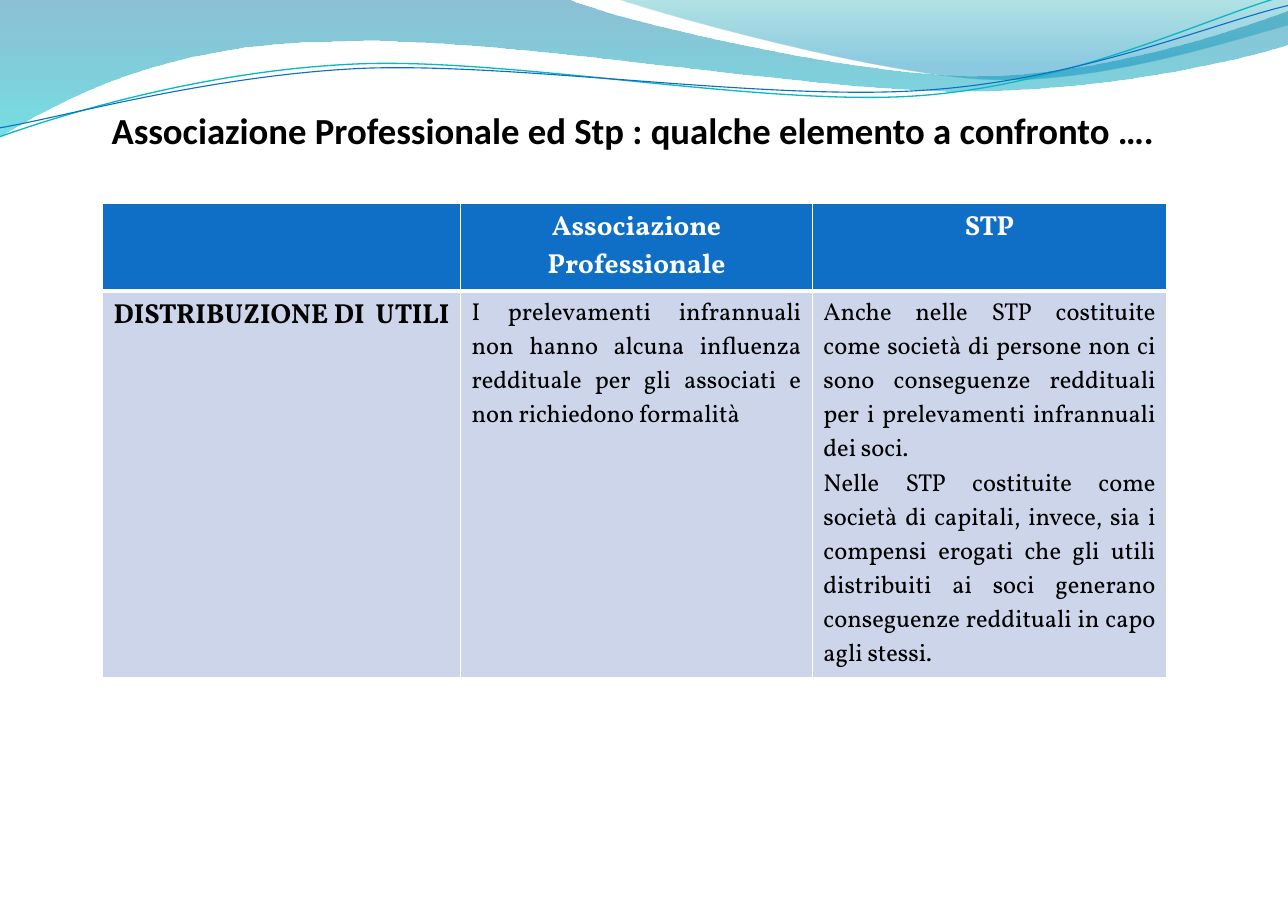
from lxml.etree import SubElement
from pptx import Presentation
from pptx.dml.color import RGBColor
from pptx.enum.text import MSO_ANCHOR, PP_ALIGN as Align
from pptx.oxml.ns import qn
from pptx.util import Pt

THEME = {
    "title_font": "Calibri", "table_font": "Vollkorn",
    "title_size": 24, "header_size": 18, "body_size": 16,
    "black": "000000", "white": "FFFFFF", "blue": "0F6FC6", "teal": "0AB8BF",
    "body_fill": "CCD5EA",
    "wide_gradient": [(0, "0074A1", 45), (1, "00C6CF", 55)],
    "crest_gradient": [(0, "00A1A9", 30), (0.8, "008BBF", 45)],
}
PAGE_SIZE = (841.7, 594.7)
TITLE = "Associazione Professionale ed Stp : qualche elemento a confronto …."
TITLE_BOX = (72.9, 69.3, 696.2, 30.2)

TABLE_AT = (67, 133.2)
COLUMN_WIDTHS = (234, 229.9, 231.6)
ROW_HEIGHTS = (57.2, 252.5)
HEADER = ["", "Associazione Professionale", "STP"]
ROW_LABEL = "DISTRIBUZIONE DI  UTILI"
COMPARISON = [
    ["I prelevamenti infrannuali non hanno alcuna influenza reddituale per gli "
     "associati e non richiedono formalità"],
    ["Anche nelle STP costituite come società di persone non ci sono conseguenze "
     "reddituali per i prelevamenti infrannuali dei soci.",
     "Nelle STP costituite come società di capitali, invece, sia i compensi erogati "
     "che gli utili distribuiti ai soci generano conseguenze reddituali in capo "
     "agli stessi."],
]

# Each step is one point (straight) or two handles and an end point (curve).
WIDE_WAVE = [
    [(0, 0)], [(370.8, -0.7)],
    [(400.3, 13), (558.7, 49.7), (638.6, 49.7)],
    [(718.6, 49.7), (807.1, 20.2), (841.7, 7.2)],
    [(843.1, 28.8)],
    [(828, 34.6), (732.2, 59.8), (627.8, 59.8)],
    [(523.4, 59.8), (321.1, 22.3), (216.7, 27.4)],
    [(108.7, 28.1), (38.9, 65.5), (-0.7, 90)],
]
CREST_WAVE = [
    [(403.2, -0.7)],
    [(429.1, 8.6), (573.8, 49), (647.3, 51.8)],
    [(720.7, 54.7), (809.3, 25.2), (841.7, 16.6)],
    [(841.7, 0)],
]
TEAL_LINE = [
    [(0, 89.3)],
    [(40.3, 74.9), (133.2, 46.1), (232.6, 41.8)],
    [(332.6, 37.4), (499, 69.8), (599.8, 62.6)],
    [(701.3, 55.4), (789.8, 10.8), (840.2, -2.9)],
]
BLUE_LINE = [
    [(0, 83.5)],
    [(39.6, 77), (137.5, 49), (238.3, 44.6)],
    [(339.1, 41), (502.6, 66.2), (603.4, 59)],
    [(704.9, 52.6), (792.7, 15.1), (841.7, 3.6)],
]


def color(name):
    return RGBColor.from_string(THEME.get(name, name))


def add_outline(page, steps, closed):
    """Draw straight segments between the step ends, then bend the curved ones."""
    start, *ends = [tuple(map(Pt, step[-1])) for step in steps]
    builder = page.shapes.build_freeform(*start)
    builder.add_line_segments(ends, close=closed)
    shape = builder.convert_to_shape()
    shape.shadow.inherit = False
    segments = list(shape.element.spPr.iter(qn("a:lnTo")))
    for segment, step in zip(segments, steps[1:]):
        if len(step) == 1:
            continue
        segment.tag = qn("a:cubicBezTo")
        segment.remove(segment[0])
        for x, y in step:
            SubElement(segment, qn("a:pt"),
                       x=str(Pt(x) - shape.left), y=str(Pt(y) - shape.top))
    return shape


def add_wave(page, steps, gradient):
    wave = add_outline(page, steps, True)
    wave.line.fill.background()
    wave.fill.gradient()
    wave.fill.gradient_angle = 270
    for stop, (position, shade, _) in zip(wave.fill.gradient_stops, gradient):
        stop.position = position
        stop.color.rgb = color(shade)
    shades = wave.element.spPr.iter(qn("a:srgbClr"))
    for node, (_, _, opacity) in zip(shades, gradient):
        SubElement(node, qn("a:alpha"), val=str(opacity * 1000))


def add_wave_line(page, steps, shade, width):
    curve = add_outline(page, steps, False)
    curve.fill.background()
    curve.line.color.rgb = color(shade)
    curve.line.width = Pt(width)


def write(frame, texts, font, size, shade, bold, align):
    for index, text in enumerate(texts):
        para = frame.add_paragraph() if index else frame.paragraphs[0]
        para.alignment = align
        span = para.add_run()
        span.text = text
        span.font.name = THEME[font]
        span.font.size = Pt(THEME[size])
        span.font.bold = bold
        span.font.color.rgb = color(shade)


def style_cell(cell, fill, top, bottom):
    """Set white borders (top and bottom widths given) and a solid fill."""
    properties = cell._tc.get_or_add_tcPr()
    for side, width in (("L", 1), ("R", 1), ("T", top), ("B", bottom)):
        border = SubElement(properties, qn(f"a:ln{side}"), w=str(Pt(width)))
        paint = SubElement(border, qn("a:solidFill"))
        SubElement(paint, qn("a:srgbClr"), val=THEME["white"])
    cell.fill.solid()
    cell.fill.fore_color.rgb = color(fill)


def add_title(page):
    box = page.shapes.add_textbox(*map(Pt, TITLE_BOX))
    frame = box.text_frame
    frame.word_wrap = True
    frame.vertical_anchor = MSO_ANCHOR.BOTTOM
    frame.margin_left = frame.margin_right = frame.margin_top = frame.margin_bottom = 0
    write(frame, [TITLE], "title_font", "title_size", "black", True, Align.LEFT)


def add_comparison(page):
    size = (sum(COLUMN_WIDTHS), sum(ROW_HEIGHTS))
    table = page.shapes.add_table(len(ROW_HEIGHTS), len(COLUMN_WIDTHS),
                                  *map(Pt, TABLE_AT + size)).table
    for row, height in zip(table.rows, ROW_HEIGHTS):
        row.height = Pt(height)
    body = [[ROW_LABEL], *COMPARISON]
    for index, width in enumerate(COLUMN_WIDTHS):
        table.columns[index].width = Pt(width)
        head, cell = table.cell(0, index), table.cell(1, index)
        style_cell(head, "blue", 1, 3)
        style_cell(cell, "body_fill", 3, 1)
        if HEADER[index]:
            write(head.text_frame, [HEADER[index]], "table_font", "header_size",
                  "white", True, Align.CENTER)
        is_label = index == 0
        write(cell.text_frame, body[index], "table_font",
              "header_size" if is_label else "body_size", "black", is_label,
              Align.JUSTIFY)


def main():
    deck = Presentation()
    deck.slide_width, deck.slide_height = map(Pt, PAGE_SIZE)
    page = deck.slides.add_slide(deck.slide_layouts[6])
    add_wave(page, WIDE_WAVE, THEME["wide_gradient"])
    add_wave(page, CREST_WAVE, THEME["crest_gradient"])
    add_wave_line(page, TEAL_LINE, "teal", 0.85)
    add_wave_line(page, BLUE_LINE, "blue", 0.75)
    add_title(page)
    add_comparison(page)
    deck.save("out.pptx")


if __name__ == "__main__":
    main()
